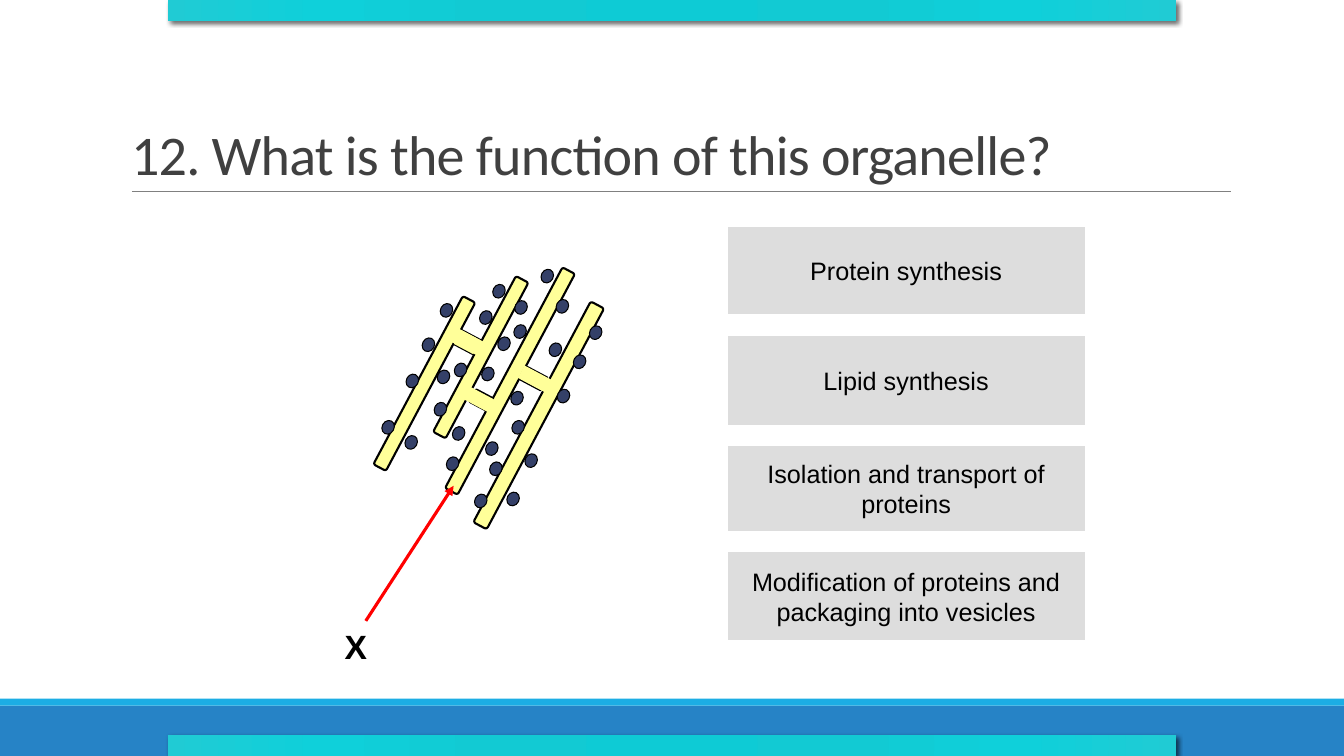
import lxml.etree
import pptx
import pptx.dml.color
import pptx.enum.shapes
import pptx.enum.text
import pptx.oxml
import pptx.oxml.ns
import pptx.util

Pt = pptx.util.Pt
SHAPE = pptx.enum.shapes.MSO_SHAPE
ALIGN = pptx.enum.text.PP_ALIGN
ANCHOR = pptx.enum.text.MSO_ANCHOR
AUTO_SIZE = pptx.enum.text.MSO_AUTO_SIZE
STRAIGHT = pptx.enum.shapes.MSO_CONNECTOR.STRAIGHT

COLORS = {
    "footer": "2683C6", "strip": "1CADE4", "rule": "808080", "title": "404040",
    "membrane": "FFFF99", "ribosome": "344068", "ink": "000000",
    "answer": "DDDDDD", "pointer": "FF0000",
}
BAND_STOPS = [(0, "0ECBD5"), (34, "12CAD3"), (70, "0FD0DA"), (100, "20CBD4")]
TILT = 28
RIBOSOME_SIZE = (8.6, 10.1)
TUBES = [
    (109.4, 27.4, 10.8, 178.6), (89.3, 2.9, 10.1, 178.6),
    (28.1, 25.9, 10.1, 136.1), (68.4, 12.2, 10.1, 126),
]
BRIDGES = [
    ((55.4, 58.3, 16.6, 12.2), 0.75, (53.3, 59.8, 25.2, 10.8)),
    ((67, 100.8, 13.7, 10.1), 1.5, (60.5, 100.8, 25.2, 10.1)),
    ((103, 85, 16.6, 10.8), 1, (100.8, 86.4, 25.2, 10.1)),
]
RIBOSOMES = [
    (97.9, 34.6), (97.2, 51.8), (85.7, 60.5), (74.2, 82.1), (53.3, 124.6),
    (82.1, 23), (72.7, 41.8), (54.7, 79.2), (40.3, 107.3), (44.6, 36.7),
    (31.7, 61.2), (20.2, 87.1), (2.9, 120.2), (42.5, 84.2), (19.4, 131),
    (49, 146.2), (116.6, 12.2), (69.1, 172.8), (95, 99.4), (77, 135.4),
    (122.4, 64.8), (127.4, 33.8), (151.2, 52.6), (95.8, 120.2),
    (79.9, 149.8), (128.2, 97.9), (139.7, 73.4), (105.1, 144), (92.2, 171.4),
]
ANSWERS = [
    ("Protein synthesis", 62.6),
    ("Lipid synthesis", 64.1),
    ("Isolation and transport of proteins", 60.5),
    ("Modification of proteins and packaging into vesicles", 62.6),
]


def color(name):
    """Return the named colour."""
    return pptx.dml.color.RGBColor.from_string(COLORS[name])


def add_part(shapes, kind, box, fill, outline=0, tilt=0):
    """Add a filled shape without shadow, outlined in ink if asked."""
    part = shapes.add_shape(kind, *map(Pt, box))
    part.shadow.inherit = False
    part.rotation = tilt
    part.fill.solid()
    part.fill.fore_color.rgb = color(fill)
    if outline:
        part.line.color.rgb = color("ink")
        part.line.width = Pt(outline)
    else:
        part.line.fill.background()
    return part


def add_line(page, start, end, stroke, width):
    """Add a straight line without shadow."""
    line = page.shapes.add_connector(STRAIGHT, *map(Pt, start + end))
    line.line.color.rgb = color(stroke)
    line.line.width = Pt(width)
    properties = line._element.spPr
    lxml.etree.SubElement(properties, pptx.oxml.ns.qn("a:effectLst"))
    return line


def style_text(para, size, font, ink, bold=False):
    """Format every run of a paragraph."""
    for span in para.runs:
        span.font.size = Pt(size)
        span.font.name = font
        span.font.bold = bold
        span.font.color.rgb = color(ink)


def add_footer(page, box):
    """Fill the box with the footer bar below its light strip."""
    left, top, width, height = box
    strip = 5
    add_part(page.shapes, SHAPE.RECTANGLE,
             (left, top + strip, width, height - strip), "footer")
    add_part(page.shapes, SHAPE.RECTANGLE, (left, top, width, strip), "strip")


def add_heading(page, box, text):
    """Place the title in the box with a rule along its foot."""
    left, top, width, height = box
    title = page.shapes.title
    title.left, title.top, title.width, title.height = map(Pt, box)
    frame = title.text_frame
    frame.text = text
    frame.auto_size = AUTO_SIZE.NONE
    frame.vertical_anchor = ANCHOR.BOTTOM
    para = frame.paragraphs[0]
    para.alignment = ALIGN.LEFT
    para.line_spacing = 0.85
    style_text(para, 40, "Calibri", "title")
    para.runs[0].font._element.set("spc", "-50")
    foot = top + height
    add_line(page, (left + 7.9, foot), (left + width + 0.7, foot), "rule", 0.5)


def add_organelle(page, box):
    """Draw the tilted membranes, their bridges and the ribosomes."""
    left, top = box[:2]
    shapes = page.shapes.add_group_shape().shapes

    def place(kind, part, fill, outline=0):
        """Add one tilted part at its offset in the box."""
        spot = (left + part[0], top + part[1]) + part[2:]
        return add_part(shapes, kind, spot, fill, outline, TILT)

    for tube in TUBES:
        place(SHAPE.ROUNDED_RECTANGLE, tube, "membrane", 1.5)
    for edge, outline, filling in BRIDGES:
        place(SHAPE.RECTANGLE, edge, "membrane", outline)
        place(SHAPE.RECTANGLE, filling, "membrane")
    for ribosome in RIBOSOMES:
        place(SHAPE.OVAL, ribosome + RIBOSOME_SIZE, "ribosome", 0.75)


def add_answers(page, box, gap):
    """Stack the answer buttons down the box."""
    left, top, width = box[:3]
    for text, height in ANSWERS:
        button = add_part(page.shapes, SHAPE.ACTION_BUTTON_CUSTOM,
                          (left, top, width, height), "answer")
        frame = button.text_frame
        frame.text = text
        frame.word_wrap = True
        frame.vertical_anchor = ANCHOR.MIDDLE
        para = frame.paragraphs[0]
        para.alignment = ALIGN.CENTER
        style_text(para, 18, "Arial", "ink")
        top += height + gap


def add_pointer(page, box):
    """Label the lower left corner of the box and point to its upper right."""
    left, top, width, height = box
    label = page.shapes.add_textbox(*map(Pt, (left, top + height - 36, 30.2, 36)))
    label.text_frame.text = "X"
    label.text_frame.word_wrap = False
    style_text(label.text_frame.paragraphs[0], 24, "Arial", "ink", True)
    arrow = add_line(page, (left + 22.3, top + height - 36),
                     (left + width, top), "pointer", 2.25)
    outline = arrow.line._get_or_add_ln()
    lxml.etree.SubElement(outline, pptx.oxml.ns.qn("a:tailEnd"), type="triangle")


def add_band(page, box):
    """Fill the box with a shaded, shadowed turquoise band."""
    band = page.shapes.add_shape(SHAPE.RECTANGLE, *map(Pt, box))
    band.line.fill.background()
    band.shadow.inherit = False
    namespace = pptx.oxml.ns.nsdecls("a")
    stops = "".join(
        f'<a:gs pos="{place * 1000}"><a:srgbClr val="{shade}"/></a:gs>'
        for place, shade in BAND_STOPS)
    gradient = pptx.oxml.parse_xml(
        f'<a:gradFill {namespace}><a:gsLst>{stops}</a:gsLst><a:path path="circle">'
        '<a:fillToRect l="100000" t="100000" r="100000" b="100000"/>'
        '</a:path></a:gradFill>')
    shadow = pptx.oxml.parse_xml(
        f'<a:outerShdw {namespace} blurRad="{Pt(3.5)}" dist="{Pt(2)}" dir="2700000">'
        '<a:srgbClr val="000000"><a:alpha val="60000"/></a:srgbClr></a:outerShdw>')
    properties = band._element.spPr
    properties.find(pptx.oxml.ns.qn("a:prstGeom")).addnext(gradient)
    properties.find(pptx.oxml.ns.qn("a:effectLst")).append(shadow)


def main():
    """Build the question slide."""
    deck = pptx.Presentation()
    deck.slide_width, deck.slide_height = Pt(960), Pt(540)
    page = deck.slides.add_slide(deck.slide_layouts[5])
    add_footer(page, (0, 499, 960, 41))
    add_heading(page, (86.4, 22.3, 792, 114.5),
                "12. What is the function of this organelle?")
    add_organelle(page, (270, 180, 162, 198))
    add_answers(page, (519.8, 162, 254.9, 295.2), 15.1)
    add_pointer(page, (239, 347, 85, 132.5))
    for top in (0, 525):
        add_band(page, (120, top, 720, 15))
    deck.save("out.pptx")


if __name__ == "__main__":
    main()
